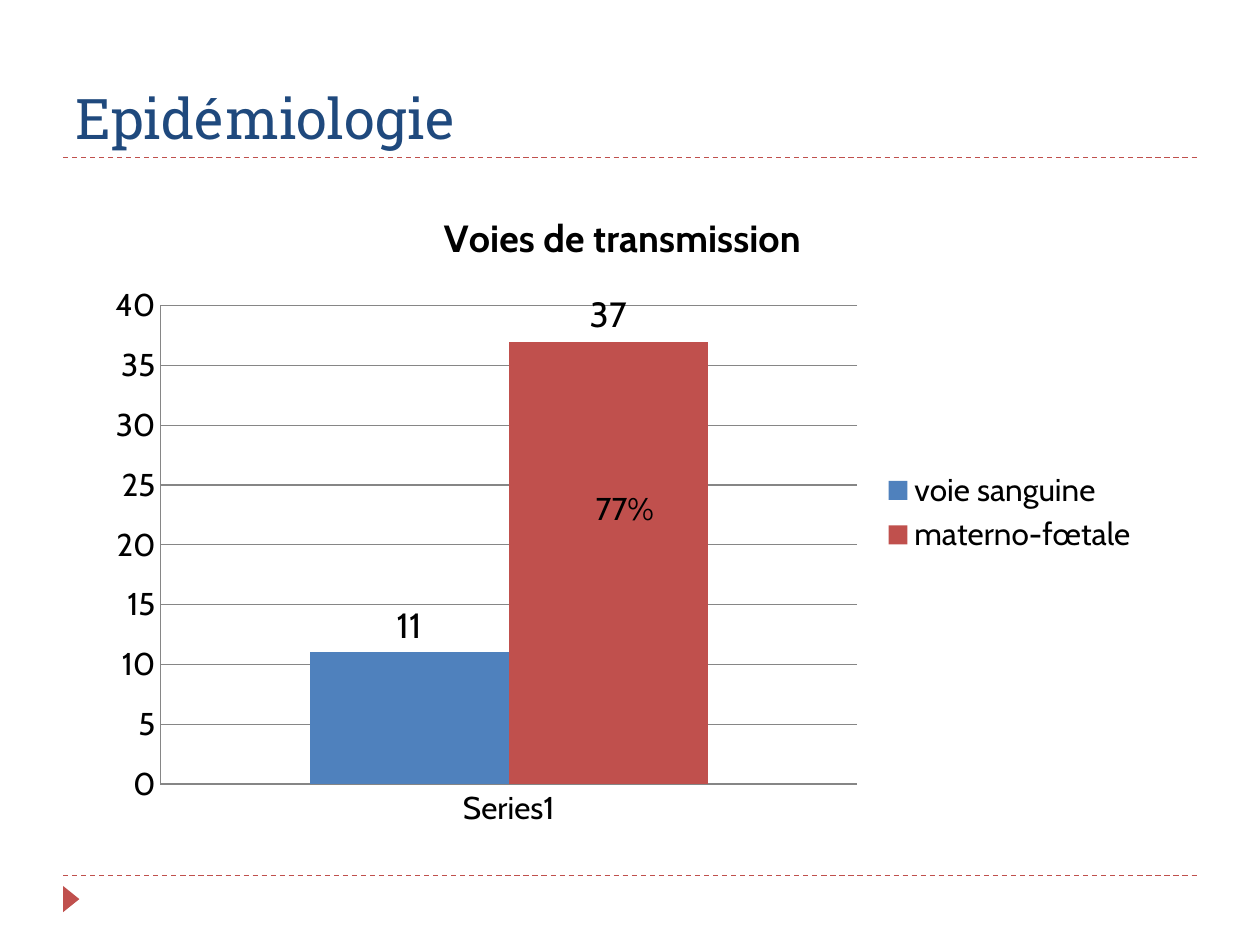
from lxml.etree import SubElement
from pptx import Presentation
from pptx.chart.data import CategoryChartData
from pptx.dml.color import RGBColor
from pptx.enum.chart import XL_CHART_TYPE, XL_LABEL_POSITION, XL_LEGEND_POSITION, XL_TICK_MARK
from pptx.enum.dml import MSO_LINE
from pptx.enum.shapes import MSO_CONNECTOR, MSO_SHAPE
from pptx.enum.text import MSO_ANCHOR, PP_ALIGN
from pptx.oxml.ns import qn
from pptx.util import Cm, Pt

NAVY, RED, BLUE, BLACK, GREY = "1F497D", "C0504D", "4F81BD", "000000", "868686"
ROUTES = [("voie sanguine", 11, BLUE), ("materno-fœtale", 37, RED)]


def rgb(color):
    """Turn a hex string into a colour."""
    return RGBColor.from_string(color)


def style_font(font, name, size, color, bold=False):
    """Set the face, size, colour and weight of a font."""
    font.name, font.size, font.bold = name, Pt(size), bold
    font.color.rgb = rgb(color)


def add_heading(slide, text):
    """Place and format the slide title."""
    heading = slide.shapes.title
    heading.left, heading.top, heading.width, heading.height = Cm(1.27), Cm(0.43), Cm(22.86), Cm(2.74)
    heading.text_frame.text = text
    heading.text_frame.vertical_anchor = MSO_ANCHOR.BOTTOM
    paragraph = heading.text_frame.paragraphs[0]
    paragraph.alignment = PP_ALIGN.LEFT
    style_font(paragraph.font, "Roboto Slab", 32, NAVY)


def add_dashed_rule(slide, y):
    """Draw a dashed rule between the side margins."""
    rule = slide.shapes.add_connector(MSO_CONNECTOR.STRAIGHT, Cm(1.27), Cm(y), Cm(24.13), Cm(y))
    rule.line.color.rgb = rgb(RED)
    rule.line.width = Pt(0.75)
    rule.line.dash_style = MSO_LINE.DASH
    SubElement(rule._element.spPr, qn("a:effectLst"))


def add_page_marker(slide):
    """Draw the triangle that points right at the foot of the slide."""
    marker = slide.shapes.add_shape(MSO_SHAPE.ISOSCELES_TRIANGLE, Cm(1.17), Cm(17.96), Cm(0.53), Cm(0.33))
    marker.rotation = 90
    marker.shadow.inherit = False
    marker.fill.solid()
    marker.fill.fore_color.rgb = rgb(RED)
    marker.line.fill.background()


def format_axis(axis):
    """Give an axis a thin grey line without tick marks."""
    axis.major_tick_mark = axis.minor_tick_mark = XL_TICK_MARK.NONE
    axis.format.line.color.rgb = rgb(GREY)
    axis.format.line.width = Pt(0.75)


def format_series(series, color):
    """Colour a series and show its values above the columns."""
    series.format.fill.solid()
    series.format.fill.fore_color.rgb = rgb(color)
    labels = series.data_labels
    labels.show_value = True
    labels.position = XL_LABEL_POSITION.OUTSIDE_END
    style_font(labels.font, "Cabin", 20, BLACK)


def add_transmission_chart(slide):
    """Add the column chart of transmission routes."""
    cases = CategoryChartData()
    cases.categories = ["Series1"]
    for route, count, _ in ROUTES:
        cases.add_series(route, [count])
    chart = slide.shapes.add_chart(
        XL_CHART_TYPE.COLUMN_CLUSTERED, Cm(1.9), Cm(3.73), Cm(21.31), Cm(13.21), cases
    ).chart
    style_font(chart.font, "Cabin", 18, BLACK)

    chart.has_title = True
    chart.chart_title.text_frame.text = "Voies de transmission"
    style_font(chart.chart_title.text_frame.paragraphs[0].font, "Cabin", 21.6, BLACK, bold=True)
    chart.has_legend = True
    chart.legend.position = XL_LEGEND_POSITION.RIGHT
    chart.legend.include_in_layout = False

    for axis in (chart.category_axis, chart.value_axis):
        format_axis(axis)
    chart.value_axis.minimum_scale, chart.value_axis.maximum_scale = 0, 40
    chart.value_axis.major_unit = 5
    gridlines = chart.value_axis.major_gridlines.format.line
    gridlines.color.rgb = rgb(GREY)
    gridlines.width = Pt(0.75)

    columns = chart.plots[0]
    columns.gap_width, columns.overlap = 150, 0
    columns.vary_by_categories = False
    for series, (_, _, color) in zip(columns.series, ROUTES):
        format_series(series, color)


def add_share(slide, text):
    """Write the share of cases on the tall column."""
    share = slide.shapes.add_textbox(Cm(11.3), Cm(9.73), Cm(2.59), Cm(1.02))
    share.text_frame.word_wrap = True
    share.text_frame.text = text
    paragraph = share.text_frame.paragraphs[0]
    paragraph.alignment = PP_ALIGN.CENTER
    style_font(paragraph.font, "Cabin", 18, BLACK)


def main():
    """Build and save the slide."""
    deck = Presentation()
    deck.slide_width, deck.slide_height = Cm(25.4), Cm(19.05)
    slide = deck.slides.add_slide(deck.slide_layouts[5])
    for y in (17.65, 3.17):
        add_dashed_rule(slide, y)
    add_page_marker(slide)
    add_heading(slide, "Epidémiologie")
    add_transmission_chart(slide)
    add_share(slide, "77%")
    deck.save("out.pptx")


if __name__ == "__main__":
    main()
